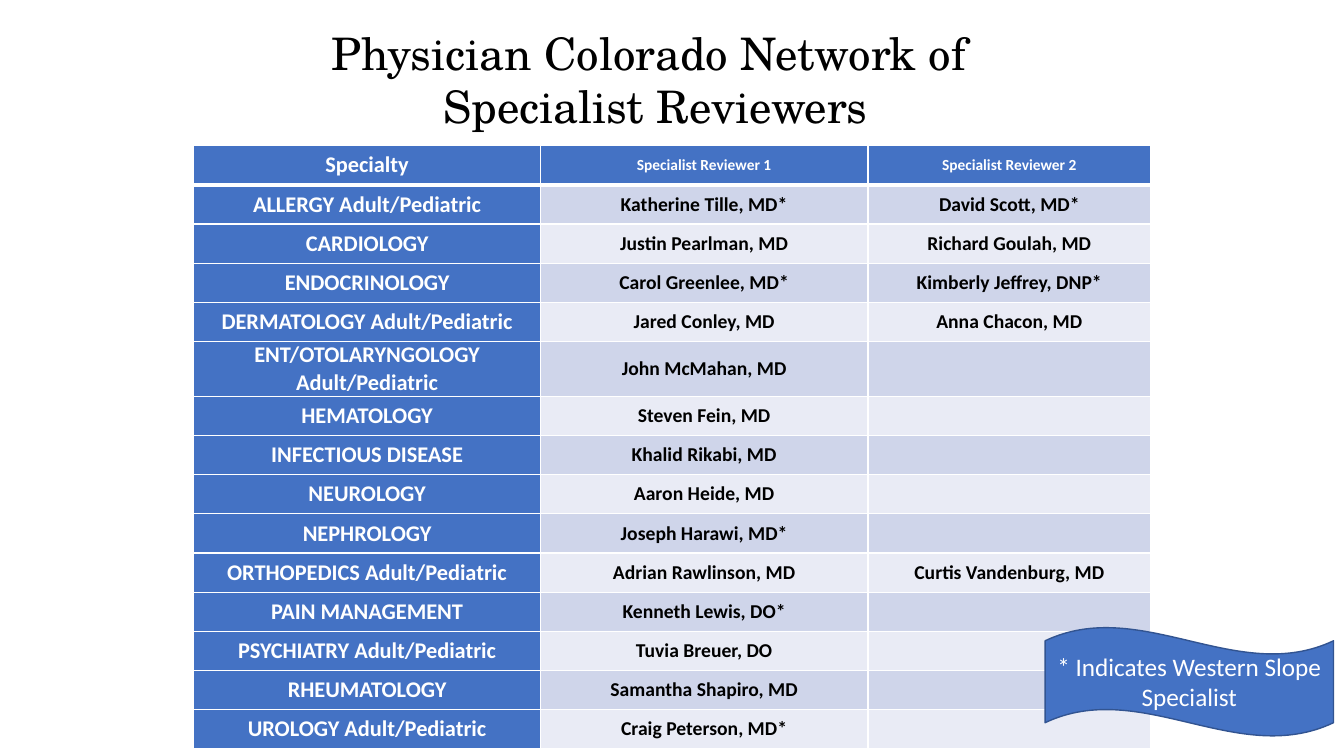
from lxml.etree import SubElement
from pptx import Presentation
from pptx.dml.color import RGBColor
from pptx.enum.shapes import MSO_SHAPE as Shape
from pptx.enum.text import MSO_ANCHOR as Anchor, MSO_AUTO_SIZE as AutoSize, PP_ALIGN as Align
from pptx.oxml.ns import qn
from pptx.util import Pt

BLUE = RGBColor(0x44, 0x72, 0xC4)
DARK_BLUE = RGBColor(0x32, 0x54, 0x91)
BAND_DARK = RGBColor(0xCF, 0xD5, 0xEA)
BAND_LIGHT = RGBColor(0xE9, 0xEB, 0xF5)
WHITE = RGBColor(0xFF, 0xFF, 0xFF)
BLACK = RGBColor(0x00, 0x00, 0x00)

HEADER = ("Specialty", "Specialist Reviewer 1", "Specialist Reviewer 2")
REVIEWERS = [
    ("ALLERGY Adult/Pediatric", "Katherine Tille, MD*", "David Scott, MD*"),
    ("CARDIOLOGY", "Justin Pearlman, MD", "Richard Goulah, MD"),
    ("ENDOCRINOLOGY", "Carol Greenlee, MD*", "Kimberly Jeffrey, DNP*"),
    ("DERMATOLOGY Adult/Pediatric", "Jared Conley, MD", "Anna Chacon, MD"),
    ("ENT/OTOLARYNGOLOGY Adult/Pediatric", "John McMahan, MD", ""),
    ("HEMATOLOGY", "Steven Fein, MD", ""),
    ("INFECTIOUS DISEASE", "Khalid Rikabi, MD", ""),
    ("NEUROLOGY", "Aaron Heide, MD", ""),
    ("NEPHROLOGY", "Joseph Harawi, MD*", ""),
    ("ORTHOPEDICS Adult/Pediatric", "Adrian Rawlinson, MD", "Curtis Vandenburg, MD"),
    ("PAIN MANAGEMENT", "Kenneth Lewis, DO*", ""),
    ("PSYCHIATRY Adult/Pediatric", "Tuvia Breuer, DO", ""),
    ("RHEUMATOLOGY", "Samantha Shapiro, MD", ""),
    ("UROLOGY Adult/Pediatric", "Craig Peterson, MD*", ""),
]


class SlideBuilder:
    title_font = "TeX Gyre Schola"
    body_font = "Calibri"

    def __init__(self, page):
        self.page = page

    def format_text(self, frame, size, color, font=body_font, bold=False):
        for para in frame.paragraphs:
            para.alignment = Align.CENTER
            for span in para.runs:
                span.font.name = font
                span.font.size = Pt(size)
                span.font.bold = bold
                span.font.color.rgb = color

    def title(self, text, left, top, width, height):
        box = self.page.shapes.title
        box.left, box.top, box.width, box.height = map(Pt, (left, top, width, height))
        frame = box.text_frame
        frame.text = text
        frame.word_wrap = True
        frame.auto_size = AutoSize.NONE
        frame.vertical_anchor = Anchor.TOP
        self.format_text(frame, 32, BLACK, self.title_font)

    def cell(self, cell, text, fill, size, color, top_line, bottom_line):
        cell.text = text
        cell.vertical_anchor = Anchor.MIDDLE
        cell.margin_left = cell.margin_right = cell.margin_top = cell.margin_bottom = 0
        self.format_text(cell.text_frame, size, color, bold=True)
        properties = cell._tc.get_or_add_tcPr()
        for side, width in zip("LRTB", (1, 1, top_line, bottom_line)):
            line = SubElement(properties, qn(f"a:ln{side}"), w=str(Pt(width)))
            solid = SubElement(line, qn("a:solidFill"))
            SubElement(solid, qn("a:srgbClr"), val=str(WHITE))
        cell.fill.solid()
        cell.fill.fore_color.rgb = fill

    def table(self, rows, left, top, widths, row_height):
        table = self.page.shapes.add_table(
            len(rows), len(widths), Pt(left), Pt(top),
            Pt(sum(widths)), Pt(row_height * len(rows))).table
        for column, width in zip(table.columns, widths):
            column.width = Pt(width)
        for i, row in enumerate(rows):
            table.rows[i].height = Pt(row_height)
            for j, text in enumerate(row):
                if i == 0 or j == 0:
                    fill, color = BLUE, WHITE
                    size = 16 if j == 0 else 11
                else:
                    fill, color = (BAND_DARK if i % 2 else BAND_LIGHT), BLACK
                    size = 14
                self.cell(table.cell(i, j), text, fill, size, color,
                          3 if i == 1 else 1, 3 if i == 0 else 1)

    def wave(self, text, left, top, width, height):
        shape = self.page.shapes.add_shape(
            Shape.WAVE, Pt(left), Pt(top), Pt(width), Pt(height))
        shape.shadow.inherit = False
        shape.fill.solid()
        shape.fill.fore_color.rgb = BLUE
        shape.line.color.rgb = DARK_BLUE
        shape.line.width = Pt(1)
        frame = shape.text_frame
        frame.text = text
        frame.word_wrap = True
        frame.vertical_anchor = Anchor.MIDDLE
        self.format_text(frame, 18, WHITE)


def main():
    deck = Presentation()
    deck.slide_width, deck.slide_height = Pt(960), Pt(540)
    builder = SlideBuilder(deck.slides.add_slide(deck.slide_layouts[5]))
    builder.title("Physician Colorado Network of \vSpecialist Reviewers", 87, 14.4, 762.5, 57.6)
    builder.table([HEADER, *REVIEWERS], 138.5, 104, (247.5, 234, 202), 28)
    builder.wave("* Indicates Western Slope Specialist", 746.5, 448, 206, 78)
    deck.save("out.pptx")


if __name__ == "__main__":
    main()
